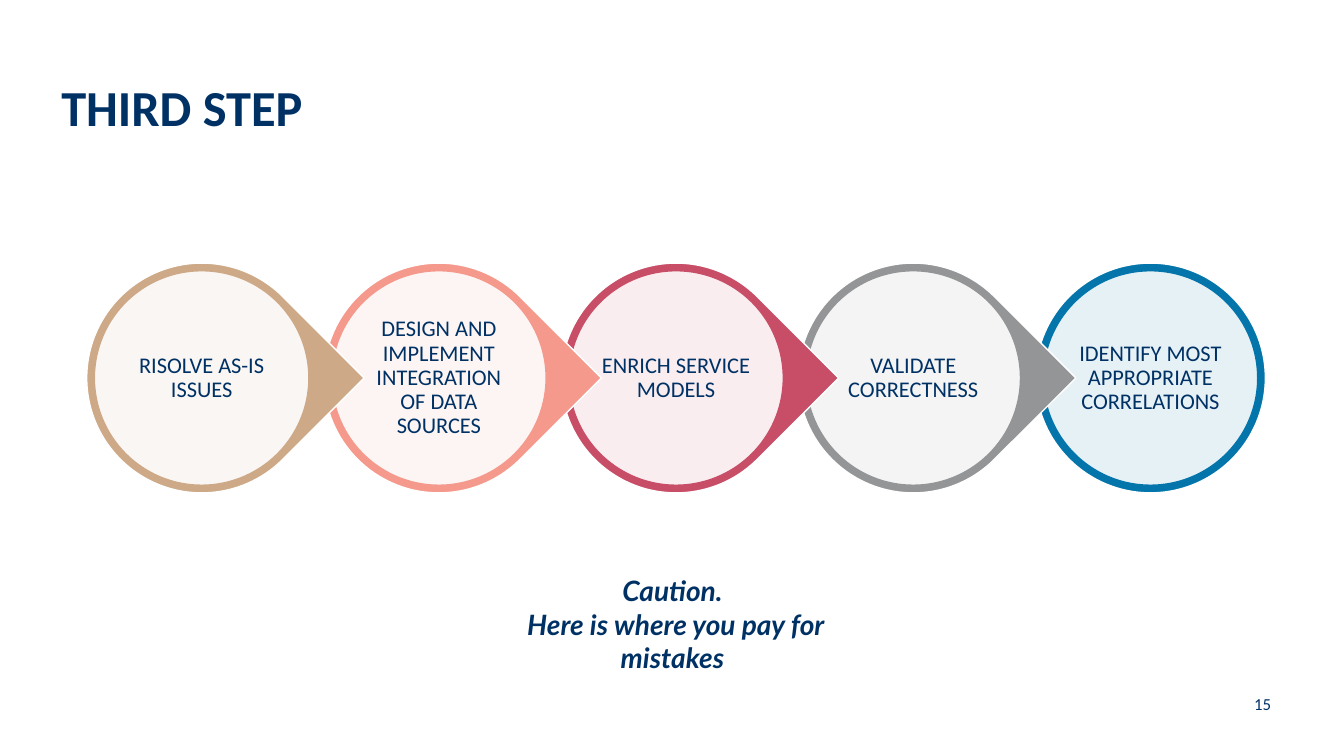
from dataclasses import dataclass

from lxml import etree
from pptx import Presentation
from pptx import util as u
from pptx.dml.color import RGBColor
from pptx.enum import shapes, text
from pptx.oxml.ns import qn


@dataclass(frozen=True)
class Theme:
    ink: str = "003165"
    paper: str = "FFFFFF"
    main: str = "Calibri"
    accent: str = "Lato"
    title: int = 36
    note: int = 20
    step: int = 16
    page: int = 12


T = Theme()
WIDE, HIGH = 13.33, 7.5
STEPS = [
    ("RISOLVE AS-IS ISSUES", "CDA987"),
    ("DESIGN AND IMPLEMENT INTEGRATION OF DATA SOURCES", "F4998B"),
    ("ENRICH SERVICE MODELS", "C74E66"),
    ("VALIDATE CORRECTNESS", "939597"),
    ("IDENTIFY MOST APPROPRIATE CORRELATIONS", "0375AB"),
]


def inches(box):
    return [u.Inches(v) for v in box]


def inset(box, gap):
    x, y, w, h = box
    return x + gap, y + gap, w - 2 * gap, h - 2 * gap


def write(parent, box, words, size, font=T.main, bold=False, italic=False,
          align=text.PP_ALIGN.LEFT, anchor=text.MSO_ANCHOR.TOP,
          margin=None, spacing=None):
    frame = parent.add_textbox(*inches(box)).text_frame
    frame.word_wrap = True
    frame.vertical_anchor = anchor
    if margin is not None:
        frame.margin_left = frame.margin_right = u.Inches(margin)
        frame.margin_top = frame.margin_bottom = u.Inches(margin)
    para = frame.paragraphs[0]
    para.text = words
    para.alignment = align
    para.line_spacing = spacing
    for run in para.runs:
        face = run.font
        face.name, face.size = font, u.Pt(size)
        face.bold, face.italic = bold, italic
        face.color.rgb = RGBColor.from_string(T.ink)


def draw(parent, kind, box, fill, line, alpha=None):
    shape = parent.add_shape(kind, *inches(box))
    shape.shadow.inherit = False
    shape.fill.solid()
    shape.fill.fore_color.rgb = RGBColor.from_string(fill)
    shape.line.color.rgb = RGBColor.from_string(line)
    shape.line.width = u.Pt(1)
    if alpha is not None:
        tint = shape.fill._xPr.find(qn("a:solidFill"))[0]
        etree.SubElement(tint, qn("a:alpha")).set("val", str(alpha * 1000))
    return shape


def step(parent, box, words, color, last):
    """One coloured drop with a pale disc and its label."""
    size = box[2]
    kind = shapes.MSO_SHAPE.OVAL if last else shapes.MSO_SHAPE.TEAR
    drop = draw(parent, kind, box, color, T.paper)
    if not last:
        drop.adjustments[0] = 1
        drop.rotation = 45
    draw(parent, shapes.MSO_SHAPE.OVAL, inset(box, size / 30),
         T.paper, color, alpha=90)
    write(parent, inset(box, size / 6), words, T.step, margin=0.02,
          align=text.PP_ALIGN.CENTER, anchor=text.MSO_ANCHOR.MIDDLE,
          spacing=0.9)


def chain(slide, box):
    """Evenly spaced steps, each pointing over the next one."""
    x, y, w, h = box
    group = slide.shapes.add_group_shape().shapes
    end = len(STEPS) - 1
    pitch = (w - h) / end
    for i in range(end, -1, -1):
        words, color = STEPS[i]
        step(group, (x + i * pitch, y, h, h), words, color, i == end)


def header(slide, box):
    write(slide.shapes, box, "THIRD STEP", T.title, bold=True,
          anchor=text.MSO_ANCHOR.BOTTOM)


def caution(slide, box):
    write(slide.shapes, box, "Caution.\v Here is where you pay for mistakes",
          T.note, font=T.accent, bold=True, italic=True,
          align=text.PP_ALIGN.CENTER)


def footer(slide, box):
    write(slide.shapes, box, "15", T.page, anchor=text.MSO_ANCHOR.MIDDLE)


def main():
    deck = Presentation()
    deck.slide_width, deck.slide_height = inches((WIDE, HIGH))
    slide = deck.slides.add_slide(deck.slide_layouts[6])
    header(slide, (0.51, 0.14, 12.14, 1.26))
    chain(slide, (0.86, 2.61, 11.69, 2.28))
    caution(slide, (4.57, 5.64, 4.2, 1.1))
    footer(slide, (12.34, 6.86, 0.49, 0.25))
    deck.save("out.pptx")


if __name__ == "__main__":
    main()
